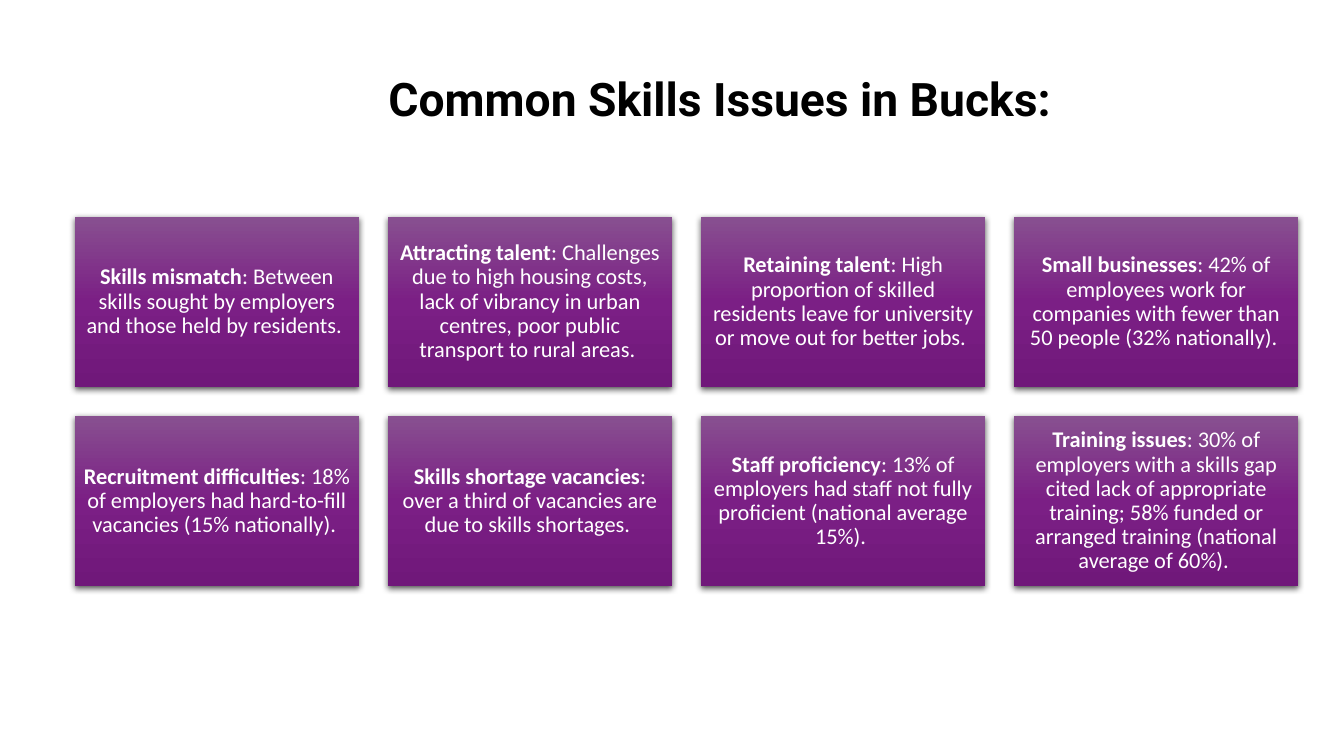
"""Build the slide on common skills issues in Bucks as a grid of eight cards."""
from copy import deepcopy
from dataclasses import dataclass

from lxml import etree
from pptx import Presentation
from pptx import util as u
from pptx.dml.color import RGBColor
from pptx.enum import shapes, text
from pptx.oxml import parse_xml
from pptx.oxml.ns import nsdecls, qn


@dataclass(frozen=True)
class Theme:
    title_color: str = "000000"
    card_text: str = "FFFFFF"
    card_stops: tuple = ((0, "885090"), (50, "7B1F85"), (100, "70187A"))
    shadow: str = "000000"
    title_size: int = 33
    card_size: int = 16
    title_font: str = "Roboto"
    card_font: str = "Calibri"


theme = Theme()


def write(frame, *parts, font, size, color, inset):
    """Fill a frame with one centred paragraph whose first part is bold."""
    frame.word_wrap = True
    frame.vertical_anchor = text.MSO_ANCHOR.MIDDLE
    frame.margin_left = frame.margin_right = u.Inches(inset)
    frame.margin_top = frame.margin_bottom = u.Inches(inset)
    paragraph = frame.paragraphs[0]
    paragraph.alignment = text.PP_ALIGN.CENTER
    paragraph.line_spacing = 0.9
    for index, part in enumerate(parts):
        run = paragraph.add_run()
        run.text = part
        run.font.name = font
        run.font.size = u.Pt(size)
        run.font.bold = index == 0
        run.font.color.rgb = RGBColor.from_string(color)


def style_card(card):
    """Give a card its vertical gradient and soft shadow, without an outline."""
    card.line.fill.background()
    card.fill.gradient()
    card.fill.gradient_angle = 270
    stops = card.element.spPr.find(".//" + qn("a:gsLst"))
    stops.append(deepcopy(stops[-1]))
    for stop, (position, color) in zip(card.fill.gradient_stops, theme.card_stops):
        stop.position = position / 100
        stop.color.rgb = RGBColor.from_string(color)
    card.shadow.inherit = False
    effects = card.element.spPr.find(qn("a:effectLst"))
    shadow = parse_xml(
        f'<a:outerShdw {nsdecls("a")} blurRad="{u.Pt(4.5)}" dist="{u.Pt(1.5)}" '
        'dir="5400000" algn="ctr" rotWithShape="0"/>'
    )
    shade = etree.SubElement(shadow, qn("a:srgbClr"), val=theme.shadow)
    etree.SubElement(shade, qn("a:alpha"), val="63000")
    effects.append(shadow)


issues = [
    ("Skills mismatch", ": Between skills sought by employers and those held by residents. "),
    ("Attracting talent", ": Challenges due to high housing costs, lack of vibrancy in urban "
     "centres, poor public transport to rural areas. "),
    ("Retaining talent", ": High proportion of skilled residents leave for university "
     "or move out for better jobs. "),
    ("Small businesses", ": 42% of employees work for companies with fewer than "
     "50 people (32% nationally). "),
    ("Recruitment difficulties", ": 18% of employers had hard-to-fill vacancies "
     "(15% nationally). "),
    ("Skills shortage vacancies", ": over a third of vacancies are due to skills shortages. "),
    ("Staff proficiency", ": 13% of employers had staff not fully proficient "
     "(national average 15%). "),
    ("Training issues", ": 30% of employers with a skills gap cited lack of appropriate "
     "training; 58% funded or arranged training (national average of 60%). "),
]

deck = Presentation()
deck.slide_width, deck.slide_height = u.Inches(13.33), u.Inches(7.5)
slide = deck.slides.add_slide(deck.slide_layouts[6])

title = slide.shapes.add_textbox(u.Inches(1.39), u.Inches(0.61), u.Inches(11.5), u.Inches(0.8))
write(title.text_frame, "Common Skills Issues in Bucks:", font=theme.title_font,
      size=theme.title_size, color=theme.title_color, inset=0.05)

columns = 4
left, top = 0.74, 2.15
card_width, card_height, gap = 2.82, 1.69, 0.286

for index, (issue, detail) in enumerate(issues):
    row, column = divmod(index, columns)
    card = slide.shapes.add_shape(
        shapes.MSO_SHAPE.RECTANGLE,
        u.Inches(left + column * (card_width + gap)),
        u.Inches(top + row * (card_height + gap)),
        u.Inches(card_width),
        u.Inches(card_height),
    )
    style_card(card)
    write(card.text_frame, issue, detail, font=theme.card_font,
          size=theme.card_size, color=theme.card_text, inset=0.07)

deck.save("out.pptx")
